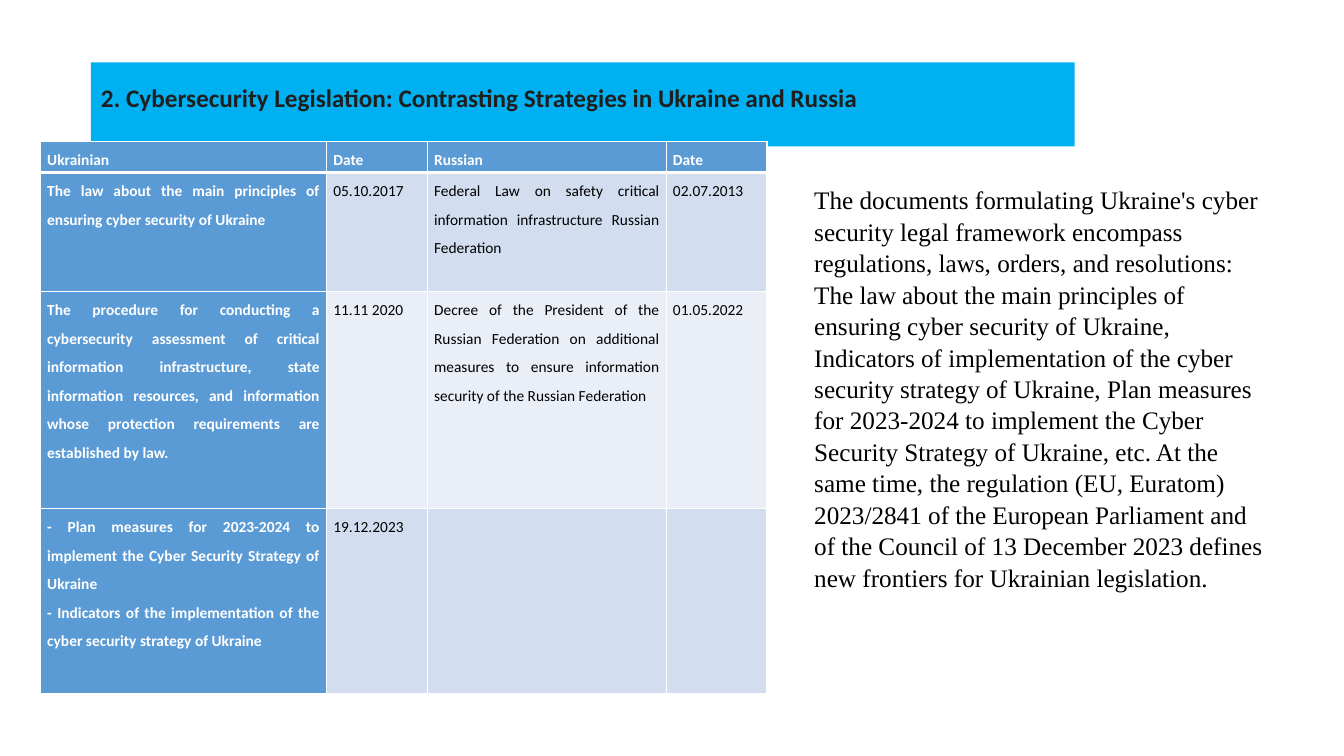
from dataclasses import dataclass

from lxml import etree
from pptx import Presentation
from pptx.dml.color import RGBColor
from pptx.enum.text import MSO_ANCHOR, MSO_AUTO_SIZE, PP_ALIGN
from pptx.oxml.ns import qn
from pptx.util import Cm, Pt

LEFT, JUSTIFY = PP_ALIGN.LEFT, PP_ALIGN.JUSTIFY
TOP = MSO_ANCHOR.TOP
GROW = MSO_AUTO_SIZE.SHAPE_TO_FIT_TEXT


@dataclass(frozen=True)
class Theme:
    banner: str = "00B0F0"
    heading: str = "1F1F1F"
    accent: str = "5B9BD5"
    bands: tuple = ("D2DEEF", "EAEFF7")
    white: str = "FFFFFF"
    black: str = "000000"
    sans: str = "Calibri"
    serif: str = "Times New Roman"
    large: int = 18
    small: int = 11


theme = Theme()


def add_text(para, text, font, size, color, bold, align, spacing):
    para.alignment = align
    para.line_spacing = spacing
    span = para.add_run()
    span.text = text
    span.font.name = font
    span.font.size = Pt(size)
    span.font.bold = bold
    span.font.color.rgb = RGBColor.from_string(color)


def add_border(cell, side, width):
    properties = cell._tc.get_or_add_tcPr()
    line = etree.Element(qn(f"a:ln{side}"), w=str(Pt(width)))
    fill = etree.SubElement(line, qn("a:solidFill"))
    etree.SubElement(fill, qn("a:srgbClr"), val=theme.white)
    properties.insert("LRTB".index(side), line)


deck = Presentation()
deck.slide_width, deck.slide_height = Cm(33.87), Cm(19.05)
page = deck.slides.add_slide(deck.slide_layouts[5])

title = page.shapes.title
title.left, title.top, title.width, title.height = Cm(2.29), Cm(1.57), Cm(24.79), Cm(1.42)
title.fill.solid()
title.fill.fore_color.rgb = RGBColor.from_string(theme.banner)
title.text_frame.word_wrap = True
title.text_frame.auto_size = GROW
title.text_frame.vertical_anchor = TOP
add_text(
    title.text_frame.paragraphs[0],
    "2. Cybersecurity Legislation: Contrasting Strategies in Ukraine and Russia",
    theme.sans, theme.large, theme.heading, True, LEFT, 1.5,
)

summary = page.shapes.add_textbox(Cm(20.27), Cm(4.5), Cm(11.94), Cm(10.26))
summary.text_frame.word_wrap = True
summary.text_frame.auto_size = GROW
add_text(
    summary.text_frame.paragraphs[0],
    "The documents formulating Ukraine's cyber security legal framework encompass "
    "regulations, laws, orders, and resolutions: The law about the main principles of "
    "ensuring cyber security of Ukraine, Indicators of implementation of the cyber "
    "security strategy of Ukraine, Plan measures for 2023-2024 to implement the Cyber "
    "Security Strategy of Ukraine, etc. At the same time, the regulation (EU, Euratom) "
    "2023/2841 of the European Parliament and of the Council of 13 December 2023 defines "
    "new frontiers for Ukrainian legislation.",
    theme.serif, theme.large, theme.black, False, LEFT, 1.04,
)

laws = [
    ["Ukrainian", "Date", "Russian", "Date"],
    [
        "The law about the main principles of ensuring cyber security of Ukraine",
        "05.10.2017",
        "Federal Law on safety critical information infrastructure Russian Federation",
        "02.07.2013",
    ],
    [
        "The procedure for conducting a cybersecurity assessment of critical information "
        "infrastructure, state information resources, and information whose protection "
        "requirements are established by law.",
        "11.11 2020",
        "Decree of the President of the Russian Federation on additional measures to "
        "ensure information security of the Russian Federation",
        "01.05.2022",
    ],
    [
        "- Plan measures for 2023-2024 to implement the Cyber Security Strategy of Ukraine\n"
        "- Indicators of the implementation of the cyber security strategy of Ukraine",
        "19.12.2023",
        "",
        "",
    ],
]
column_widths = [7.21, 2.54, 6.02, 2.54]
row_heights = [0.79, 3, 5.46, 4.68]

table = page.shapes.add_table(
    len(laws), len(column_widths),
    Cm(1.02), Cm(3.56), Cm(sum(column_widths)), Cm(sum(row_heights)),
).table
table.first_col = True
for column, width in zip(table.columns, column_widths):
    column.width = Cm(width)

for r, (entries, height) in enumerate(zip(laws, row_heights)):
    table.rows[r].height = Cm(height)
    for c, entry in enumerate(entries):
        cell = table.cell(r, c)
        is_header = r == 0 or c == 0
        cell.margin_left = cell.margin_right = Cm(0.17)
        cell.margin_top = cell.margin_bottom = 0
        cell.fill.solid()
        cell.fill.fore_color.rgb = RGBColor.from_string(
            theme.accent if is_header else theme.bands[(r - 1) % 2]
        )
        for side in "LRTB":
            under_header = (r, side) in ((0, "B"), (1, "T"))
            add_border(cell, side, 3 if under_header else 1)
        if not entry:
            continue
        for i, text in enumerate(entry.split("\n")):
            frame = cell.text_frame
            para = frame.add_paragraph() if i else frame.paragraphs[0]
            add_text(
                para, text, theme.sans, theme.small,
                theme.white if is_header else theme.black, is_header, JUSTIFY, 1.5,
            )

deck.save("out.pptx")
